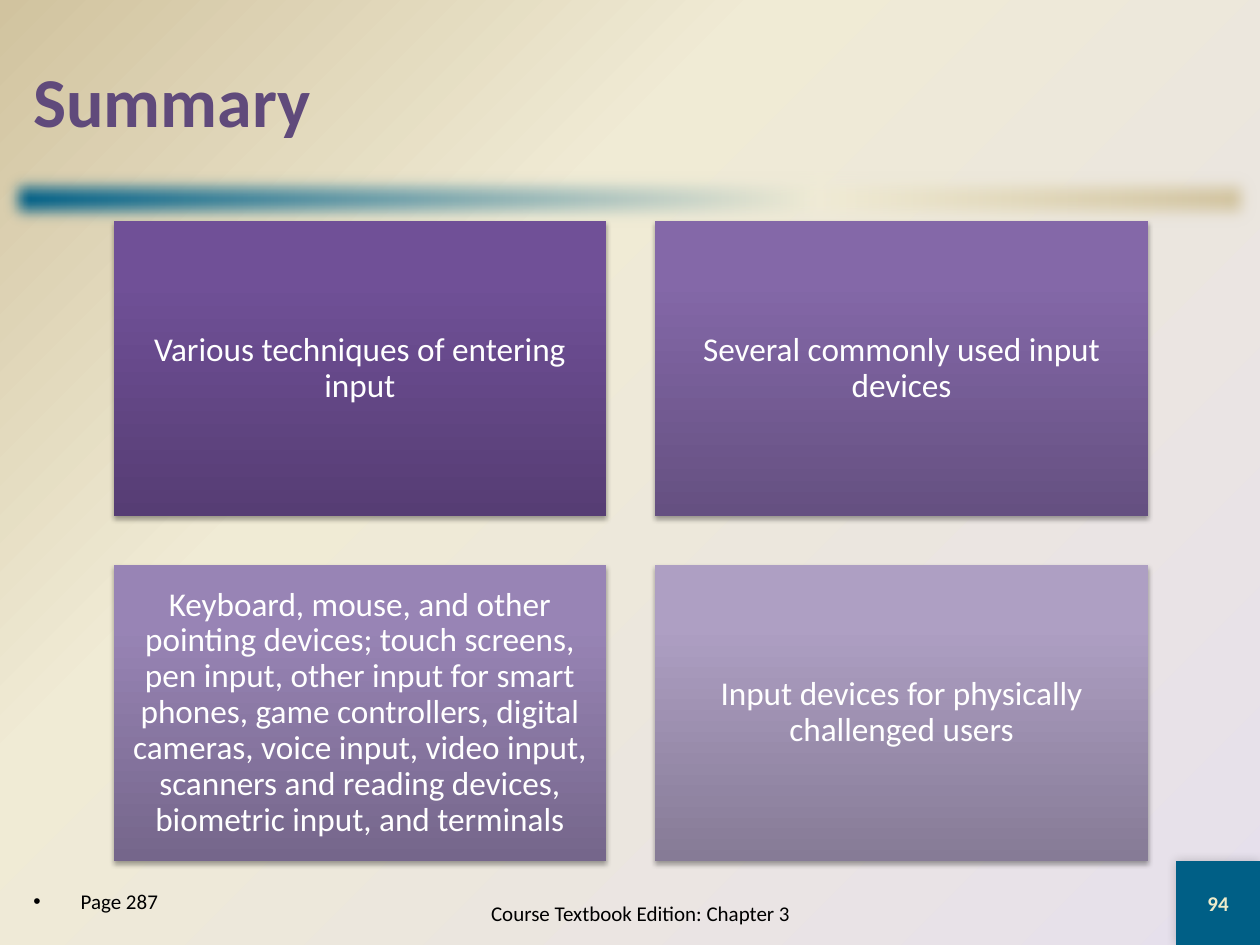
from lxml.etree import SubElement
from pptx import Presentation
from pptx.dml.color import RGBColor
from pptx.enum.shapes import MSO_SHAPE
from pptx.enum.text import MSO_ANCHOR, MSO_AUTO_SIZE, PP_ALIGN
from pptx.oxml.ns import qn
from pptx.util import Cm, Pt

FONT = "Calibri"
TEAL, CREAM, TAN, LAVENDER = "005F86", "F0EBD5", "D1C39F", "E6E0EC"

# Card text with its gradient, from bottom to top
CARDS = [
    ("Various techniques of entering input", ("563D74", "705097", "704F99")),
    ("Several commonly used input devices", ("655081", "8468A8", "8467AA")),
    ("Keyboard, mouse, and other pointing devices; touch screens, pen input, "
     "other input for smart phones, game controllers, digital cameras, voice "
     "input, video input, scanners and reading devices, biometric input, and "
     "terminals", ("75668B", "9884B5", "9984B7")),
    ("Input devices for physically challenged users",
     ("867B96", "AE9FC3", "AE9FC4")),
]


def color(value):
    return RGBColor.from_string(value)


def add_node(parent, tag, **attributes):
    return SubElement(parent, qn(tag),
                      {key: str(value) for key, value in attributes.items()})


def set_gradient(fill, element, colors, middle, angle=None):
    """Three-stop gradient; without an angle it spreads from the lower right."""
    fill.gradient()
    gradient = element.find(".//" + qn("a:gradFill"))
    for child in list(gradient):
        gradient.remove(child)
    stops = add_node(gradient, "a:gsLst")
    for position, value in zip((0, middle, 100), colors):
        stop = add_node(stops, "a:gs", pos=position * 1000)
        add_node(stop, "a:srgbClr", val=value)
    if angle is None:
        spread = add_node(gradient, "a:path", path="circle")
        add_node(spread, "a:fillToRect", l=100000, t=100000)
    else:
        add_node(gradient, "a:lin", ang=angle * 60000, scaled=0)


def add_rectangle(page, box):
    shape = page.shapes.add_shape(MSO_SHAPE.RECTANGLE, *map(Cm, box))
    shape.line.fill.background()
    shape.shadow.inherit = False
    return shape


def effects_of(shape):
    return shape._element.spPr.find(qn("a:effectLst"))


def add_shadow(shape, opacity, blur, distance, direction):
    shadow = add_node(effects_of(shape), "a:outerShdw", blurRad=Pt(blur),
                      dist=Pt(distance), dir=direction * 60000, rotWithShape=0)
    black = add_node(shadow, "a:srgbClr", val="000000")
    add_node(black, "a:alpha", val=opacity * 1000)


def write(shape, text, size, text_color, bold=False, align=PP_ALIGN.CENTER,
          anchor=MSO_ANCHOR.MIDDLE):
    frame = shape.text_frame
    frame.text = text
    frame.word_wrap = True
    frame.auto_size = MSO_AUTO_SIZE.NONE
    frame.vertical_anchor = anchor
    para = frame.paragraphs[0]
    para.alignment = align
    para.space_before = Pt(0)
    para.font.name = FONT
    para.font.size = Pt(size)
    para.font.bold = bold
    para.font.color.rgb = color(text_color)
    return para


def place(shape, box):
    shape.left, shape.top, shape.width, shape.height = map(Cm, box)


def draw_header(page, box):
    left, top, width, height = box
    # Title
    title = page.shapes.title
    place(title, (left + 0.42, top + 0.42, width - 0.84, 3.18))
    write(title, "Summary", 40, "604A7B", bold=True, align=PP_ALIGN.LEFT)
    # Soft-edged rule below the title
    rule = add_rectangle(page, (left, top + height - 1.27, width, 1.27))
    set_gradient(rule.fill, rule._element, (TEAL, CREAM, TAN), 65, 0)
    add_node(effects_of(rule), "a:softEdge", rad=Pt(10))


def draw_cards(page, box, columns=2, gap=0.99):
    left, top, width, height = box
    rows = len(CARDS) // columns
    card_width = (width - gap * (columns - 1)) / columns
    card_height = (height - gap * (rows - 1)) / rows
    for index, (text, colors) in enumerate(CARDS):
        row, column = divmod(index, columns)
        card = add_rectangle(page, (left + column * (card_width + gap),
                                    top + row * (card_height + gap),
                                    card_width, card_height))
        set_gradient(card.fill, card._element, colors, 80, 270)
        add_shadow(card, 35, 3.1, 1.8, 90)
        frame = card.text_frame
        frame.margin_left = frame.margin_right = Cm(0.2)
        frame.margin_top = frame.margin_bottom = Cm(0.2)
        write(card, text, 19, "FFFFFF").line_spacing = 0.9


def draw_footer(page, box):
    left, top, width, height = box
    # Page reference
    reference = page.placeholders[1]
    place(reference, (left + 0.42, top + 0.42, 4.65, 1.27))
    properties = reference.text_frame.paragraphs[0]._p.get_or_add_pPr()
    properties.set("marL", str(Cm(0.95)))
    properties.set("indent", str(-Cm(0.95)))
    add_node(properties, "a:buNone")
    write(reference, "Page 287", 12, "000000", align=PP_ALIGN.LEFT,
          anchor=MSO_ANCHOR.TOP)
    # Chapter line
    chapter = page.shapes.add_textbox(Cm(left + 7.62), Cm(top + 0.42),
                                      Cm(10.59), Cm(1.27))
    write(chapter, "Course Textbook Edition: Chapter 3", 12, "000000")
    # Slide number in the corner
    corner = add_rectangle(page, (left + width - height, top, height, height))
    corner.fill.solid()
    corner.fill.fore_color.rgb = color(TEAL)
    add_shadow(corner, 20, 6, 0, 225)
    write(corner, "94", 12, "EEEBCA", bold=True)


def main():
    deck = Presentation()
    deck.slide_width, deck.slide_height = Cm(25.4), Cm(19.05)
    page = deck.slides.add_slide(deck.slide_layouts[1])
    set_gradient(page.background.fill, page._element,
                 (LAVENDER, CREAM, TAN), 65)
    draw_header(page, (0, 0, 25.4, 4.65))
    draw_cards(page, (2.29, 4.45, 20.85, 12.9))
    draw_footer(page, (0, 17.36, 25.4, 1.69))
    deck.save("out.pptx")


if __name__ == "__main__":
    main()
